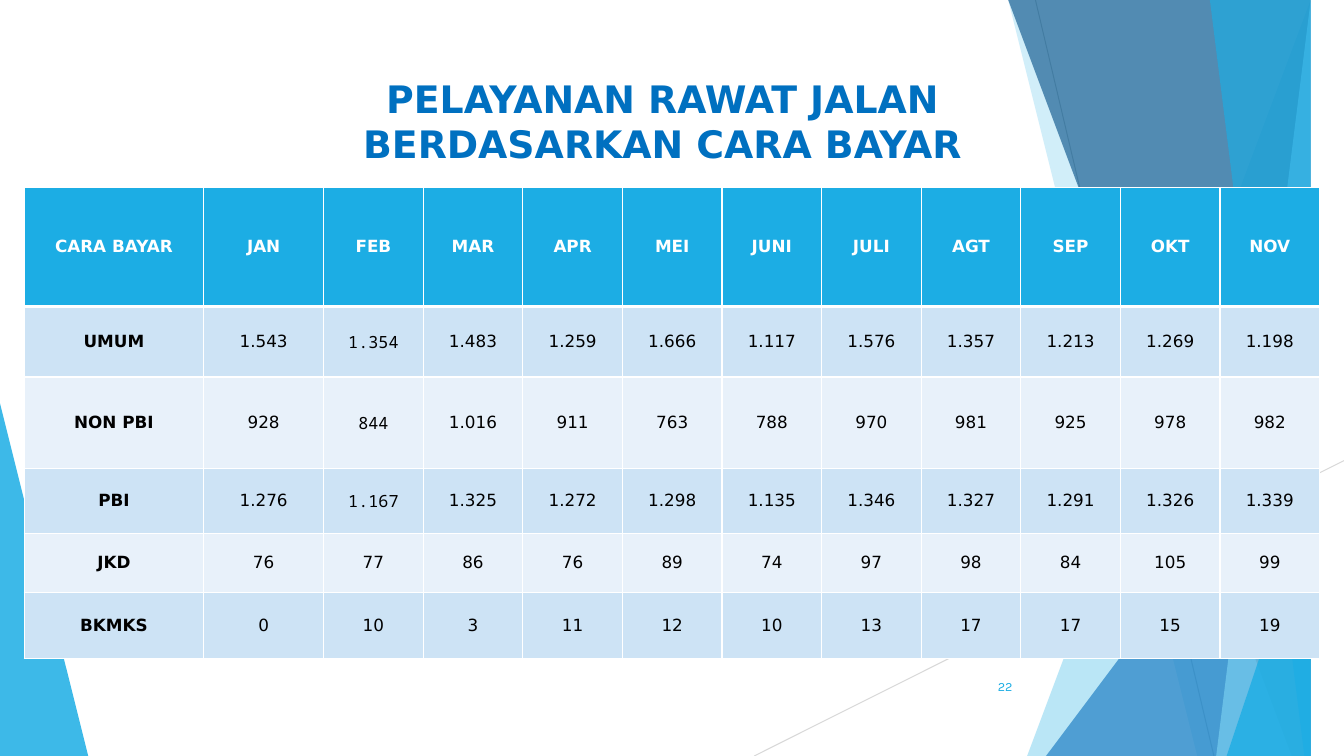
from pptx import Presentation
from pptx.dml.color import RGBColor
from pptx.enum.shapes import MSO_CONNECTOR
from pptx.enum.text import MSO_ANCHOR, PP_ALIGN
from pptx.oxml.ns import qn
from pptx.util import Inches, Pt
from lxml import etree

CENTER, RIGHT = PP_ALIGN.CENTER, PP_ALIGN.RIGHT
TOP, MIDDLE = MSO_ANCHOR.TOP, MSO_ANCHOR.MIDDLE
STRAIGHT = MSO_CONNECTOR.STRAIGHT

WHITE = RGBColor(0xFF, 0xFF, 0xFF)
BLACK = RGBColor(0x00, 0x00, 0x00)
SKY = RGBColor(0x1C, 0xAD, 0xE4)
PALE_SKY = RGBColor(0x77, 0xCE, 0xEF)
BLUE = RGBColor(0x26, 0x83, 0xC6)
NAVY = RGBColor(0x1D, 0x62, 0x94)
TITLE_BLUE = RGBColor(0x00, 0x70, 0xC0)
BANDS = (RGBColor(0xCD, 0xE3, 0xF5), RGBColor(0xE8, 0xF1, 0xFA))
LIGHT_GRAY = RGBColor(0xD9, 0xD9, 0xD9)
GRAY = RGBColor(0xBF, 0xBF, 0xBF)

SANS, MONO, NUMBER_FONT = "DejaVu Sans", "Noto Sans Mono", "Karla"

TITLE = "PELAYANAN RAWAT JALAN\vBERDASARKAN CARA BAYAR"
PAGE_NUMBER = "22"
ROWS = [
    ["CARA BAYAR", "JAN", "FEB", "MAR", "APR", "MEI", "JUNI", "JULI", "AGT", "SEP", "OKT", "NOV"],
    ["UMUM", "1.543", "1.354", "1.483", "1.259", "1.666", "1.117", "1.576", "1.357", "1.213", "1.269", "1.198"],
    ["NON PBI", "928", "844", "1.016", "911", "763", "788", "970", "981", "925", "978", "982"],
    ["PBI", "1.276", "1.167", "1.325", "1.272", "1.298", "1.135", "1.346", "1.327", "1.291", "1.326", "1.339"],
    ["JKD", "76", "77", "86", "76", "89", "74", "97", "98", "84", "105", "99"],
    ["BKMKS", "0", "10", "3", "11", "12", "10", "13", "17", "17", "15", "19"],
]
MONO_CELLS = {(1, 2), (2, 2), (3, 2)}

WIDTH, HEIGHT = 13.33, 7.5
TABLE_LEFT, TABLE_TOP, TABLE_WIDTH = 0.24, 1.86, 12.85
LEAD_COLUMNS = [1.78, 1.19]
ROW_HEIGHTS = [1.18, 0.7, 0.91, 0.64, 0.59, 0.65]

# Corner points, colour, opacity in percent; back to front
LEFT_FACET = ([(0, 4.39), (0.65, HEIGHT), (0, HEIGHT)], SKY, 85)
RIGHT_FACETS = [
    ([(13, 0), (10.05, HEIGHT), (WIDTH, HEIGHT), (WIDTH, 0)], SKY, 30),
    ([(10.5, 0), (12.26, HEIGHT), (WIDTH, HEIGHT), (WIDTH, 0)], SKY, 20),
    ([(9.68, HEIGHT), (WIDTH, 4.29), (WIDTH, HEIGHT)], BLUE, 72),
    ([(10.22, 0), (12.93, HEIGHT), (WIDTH, HEIGHT), (WIDTH, 0)], NAVY, 70),
    ([(13.08, 0), (12.09, HEIGHT), (WIDTH, HEIGHT), (WIDTH, 0)], PALE_SKY, 70),
    ([(11.77, 0), (13.14, HEIGHT), (WIDTH, HEIGHT), (13.31, 0)], SKY, 65),
    ([(11.75, HEIGHT), (WIDTH, 5.35), (WIDTH, HEIGHT)], SKY, 80),
]
RAYS = [
    ((7.48, HEIGHT), (WIDTH, 4.57), LIGHT_GRAY),
    ((10.27, 0), (12.04, HEIGHT), GRAY),
]


def add_facet(page, points, color, opacity):
    builder = page.shapes.build_freeform(*points[0], scale=Inches(1))
    builder.add_line_segments(points[1:], close=True)
    facet = builder.convert_to_shape()
    facet.shadow.inherit = False
    facet.fill.solid()
    facet.fill.fore_color.rgb = color
    facet.line.fill.background()
    shade = facet._element.spPr.find(qn("a:solidFill"))[0]
    etree.SubElement(shade, qn("a:alpha"), val=str(opacity * 1000))


def add_ray(page, start, end, color):
    ends = [Inches(value) for value in (*start, *end)]
    ray = page.shapes.add_connector(STRAIGHT, *ends)
    ray.line.color.rgb = color
    ray.line.width = Pt(0.75)
    etree.SubElement(ray._element.spPr, qn("a:effectLst"))


def style_text(frame, align, anchor, font, size, color, bold=False):
    frame.word_wrap = True
    frame.vertical_anchor = anchor
    for para in frame.paragraphs:
        para.alignment = align
        for span in para.runs:
            span.font.name = font
            span.font.size = Pt(size)
            span.font.color.rgb = color
            span.font.bold = bold


def add_text(page, area, text, *style):
    box = page.shapes.add_textbox(*[Inches(value) for value in area])
    box.text_frame.text = text
    style_text(box.text_frame, *style)


def add_borders(cell, top, bottom):
    """White borders; top and bottom are widths in points."""
    props = cell._tc.get_or_add_tcPr()
    for side, width in (("L", 1), ("R", 1), ("T", top), ("B", bottom)):
        line = etree.SubElement(props, qn(f"a:ln{side}"), w=str(Pt(width)))
        fill = etree.SubElement(line, qn("a:solidFill"))
        etree.SubElement(fill, qn("a:srgbClr"), val=str(WHITE))


def fill_cell(cell, text, row, column):
    header = row == 0
    cell.text = text
    padded = header or column == 0 or (column == 1 and row <= 3)
    cell.margin_left = cell.margin_right = Inches(0.2 if padded else 0)
    cell.margin_top = cell.margin_bottom = Inches(0.07 if padded else 0)
    cell.vertical_anchor = MIDDLE
    add_borders(cell, top=3 if row == 1 else 1, bottom=3 if header else 1)
    cell.fill.solid()
    cell.fill.fore_color.rgb = SKY if header else BANDS[(row - 1) % 2]
    para = cell.text_frame.paragraphs[0]
    para.alignment = CENTER
    font = para.runs[0].font
    font.name = MONO if (row, column) in MONO_CELLS else SANS
    font.size = Pt(12)
    font.bold = header or column == 0
    font.color.rgb = WHITE if header else BLACK


def add_payment_table(page):
    month_count = len(ROWS[0]) - len(LEAD_COLUMNS)
    month_width = (TABLE_WIDTH - sum(LEAD_COLUMNS)) / month_count
    area = (TABLE_LEFT, TABLE_TOP, TABLE_WIDTH, sum(ROW_HEIGHTS))
    table = page.shapes.add_table(
        len(ROWS), len(ROWS[0]), *[Inches(value) for value in area]).table
    for column, width in zip(table.columns, LEAD_COLUMNS + [month_width] * month_count):
        column.width = Inches(width)
    for row, height in zip(table.rows, ROW_HEIGHTS):
        row.height = Inches(height)
    for r, values in enumerate(ROWS):
        for c, text in enumerate(values):
            fill_cell(table.cell(r, c), text, r, c)


def main():
    deck = Presentation()
    deck.slide_width, deck.slide_height = Inches(WIDTH), Inches(HEIGHT)
    page = deck.slides.add_slide(deck.slide_layouts[6])
    add_facet(page, *LEFT_FACET)
    for ray in RAYS:
        add_ray(page, *ray)
    for facet in RIGHT_FACETS:
        add_facet(page, *facet)
    add_text(page, (0.57, 0.7, 12, 1.1), TITLE, CENTER, TOP, SANS, 27, TITLE_BLUE, True)
    add_payment_table(page)
    add_text(page, (9.39, 6.61, 0.75, 0.4), PAGE_NUMBER, RIGHT, MIDDLE, NUMBER_FONT, 9, SKY)
    deck.save("out.pptx")


if __name__ == "__main__":
    main()
